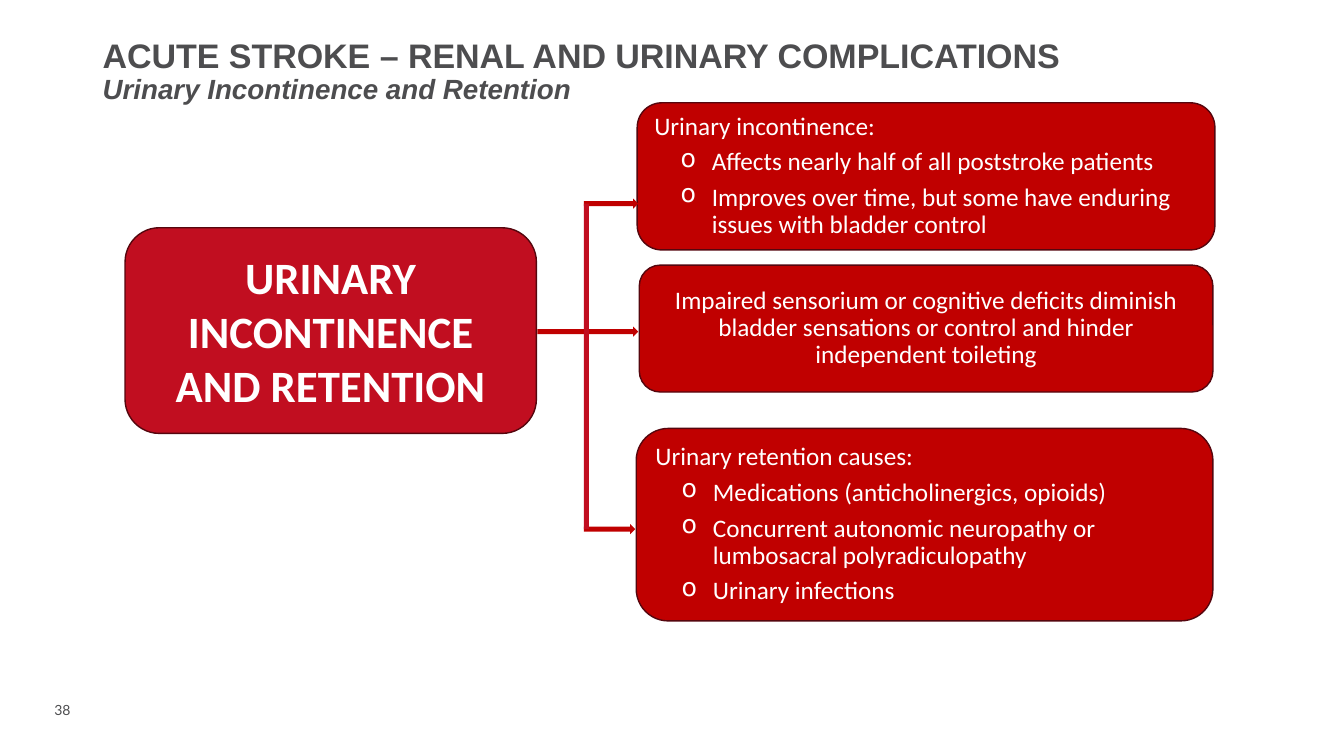
from lxml.etree import SubElement
from pptx import Presentation
from pptx.dml.color import RGBColor
from pptx.enum.shapes import MSO_SHAPE as Shape
from pptx.enum.text import MSO_ANCHOR as Anchor, PP_ALIGN as Align
from pptx.oxml.ns import qn
from pptx.util import Inches, Pt


def color(value):
    return RGBColor.from_string(value)


class SlideBuilder:
    """Holds the slide and its style and draws each kind of element."""

    gray, white = "4D4D4F", "FFFFFF"
    red, crimson, outline = "C00000", "C10E20", "55060E"

    def __init__(self, slide):
        self.slide = slide

    def style(self, font, name, size, fill, bold=False, italic=False):
        font.name, font.size = name, Pt(size)
        font.bold, font.italic = bold, italic
        font.color.rgb = color(fill)

    def textbox(self, left, top, width, height):
        box = self.slide.shapes.add_textbox(
            Inches(left), Inches(top), Inches(width), Inches(height))
        return box.text_frame

    def title(self, heading, subtitle):
        frame = self.textbox(0.92, 0.53, 11.5, 0.57)
        frame.word_wrap = True
        frame.vertical_anchor = Anchor.BOTTOM
        paragraph = frame.paragraphs[0]
        paragraph.line_spacing = 0.9
        run = paragraph.add_run()
        run.text = heading
        self.style(run.font, "Arial", 24.3, self.gray, bold=True)
        paragraph.add_line_break()
        run = paragraph.add_run()
        run.text = subtitle
        self.style(run.font, "Arial", 19.8, self.gray, bold=True, italic=True)

    def page_number(self, number):
        frame = self.textbox(0.44, 6.91, 0.39, 0.27)
        frame.word_wrap = False
        paragraph = frame.paragraphs[0]
        paragraph.text = number
        self.style(paragraph.font, "Lato", 10, self.gray)

    def block(self, kind, left, top, width, height, fill):
        shape = self.slide.shapes.add_shape(
            kind, Inches(left), Inches(top), Inches(width), Inches(height))
        shape.shadow.inherit = False
        shape.fill.solid()
        shape.fill.fore_color.rgb = color(fill)
        shape.line.fill.background()
        return shape

    def panel(self, left, top, width, height, fill):
        shape = self.block(Shape.FLOWCHART_ALTERNATE_PROCESS, left, top, width, height, fill)
        shape.line.color.rgb = color(self.outline)
        shape.line.width = Pt(1)
        frame = shape.text_frame
        frame.word_wrap = True
        frame.vertical_anchor = Anchor.MIDDLE
        return frame

    def topic(self, text):
        paragraph = self.panel(1.24, 2.26, 4.08, 2.04, self.crimson).paragraphs[0]
        paragraph.text = text
        paragraph.alignment = Align.CENTER
        self.style(paragraph.font, "Calibri", 32, self.white, bold=True)

    def detail(self, left, top, width, height, lead, bullets):
        frame = self.panel(left, top, width, height, self.red)
        for index, text in enumerate([lead, *bullets]):
            paragraph = frame.add_paragraph() if index else frame.paragraphs[0]
            paragraph.text = text
            paragraph.alignment = Align.LEFT if bullets else Align.CENTER
            paragraph.line_spacing = 0.9
            if index:
                self.bullet(paragraph)
            self.style(paragraph.font, "Calibri", 18, self.white)

    def bullet(self, paragraph):
        paragraph.level = 1
        paragraph.space_before = Pt(6)
        properties = paragraph._p.get_or_add_pPr()
        properties.set("marL", str(Inches(0.57)))
        properties.set("indent", str(Inches(-0.31)))
        SubElement(properties, qn("a:buChar")).set("char", "o")

    def arrow(self, left, top, width):
        self.block(Shape.RIGHT_ARROW, left, top, width, 0.1, self.red)


def main():
    presentation = Presentation()
    presentation.slide_width = Inches(13.33)
    presentation.slide_height = Inches(7.5)
    builder = SlideBuilder(presentation.slides.add_slide(presentation.slide_layouts[6]))

    builder.page_number("38")
    builder.title("ACUTE STROKE – RENAL AND URINARY COMPLICATIONS",
                  "Urinary Incontinence and Retention")
    builder.topic("URINARY INCONTINENCE AND RETENTION")

    details = [
        (6.32, 1.02, 5.73, 1.46, "Urinary incontinence:", [
            "Affects nearly half of all poststroke patients",
            "Improves over time, but some have enduring issues with bladder control"]),
        (6.34, 2.63, 5.69, 1.26,
         "Impaired sensorium or cognitive deficits diminish bladder sensations "
         "or control and hinder independent toileting", []),
        (6.31, 4.25, 5.72, 1.91, "Urinary retention causes:", [
            "Medications (anticholinergics, opioids)",
            "Concurrent autonomic neuropathy or lumbosacral polyradiculopathy",
            "Urinary infections"]),
    ]
    for detail in details:
        builder.detail(*detail)

    for left, top, width in [(5.33, 3.24, 1), (5.79, 1.97, 0.54), (5.79, 5.2, 0.51)]:
        builder.arrow(left, top, width)
    builder.block(Shape.RECTANGLE, 5.79, 2.02, 0.05, 3.23, builder.crimson)

    presentation.save("out.pptx")


if __name__ == "__main__":
    main()
